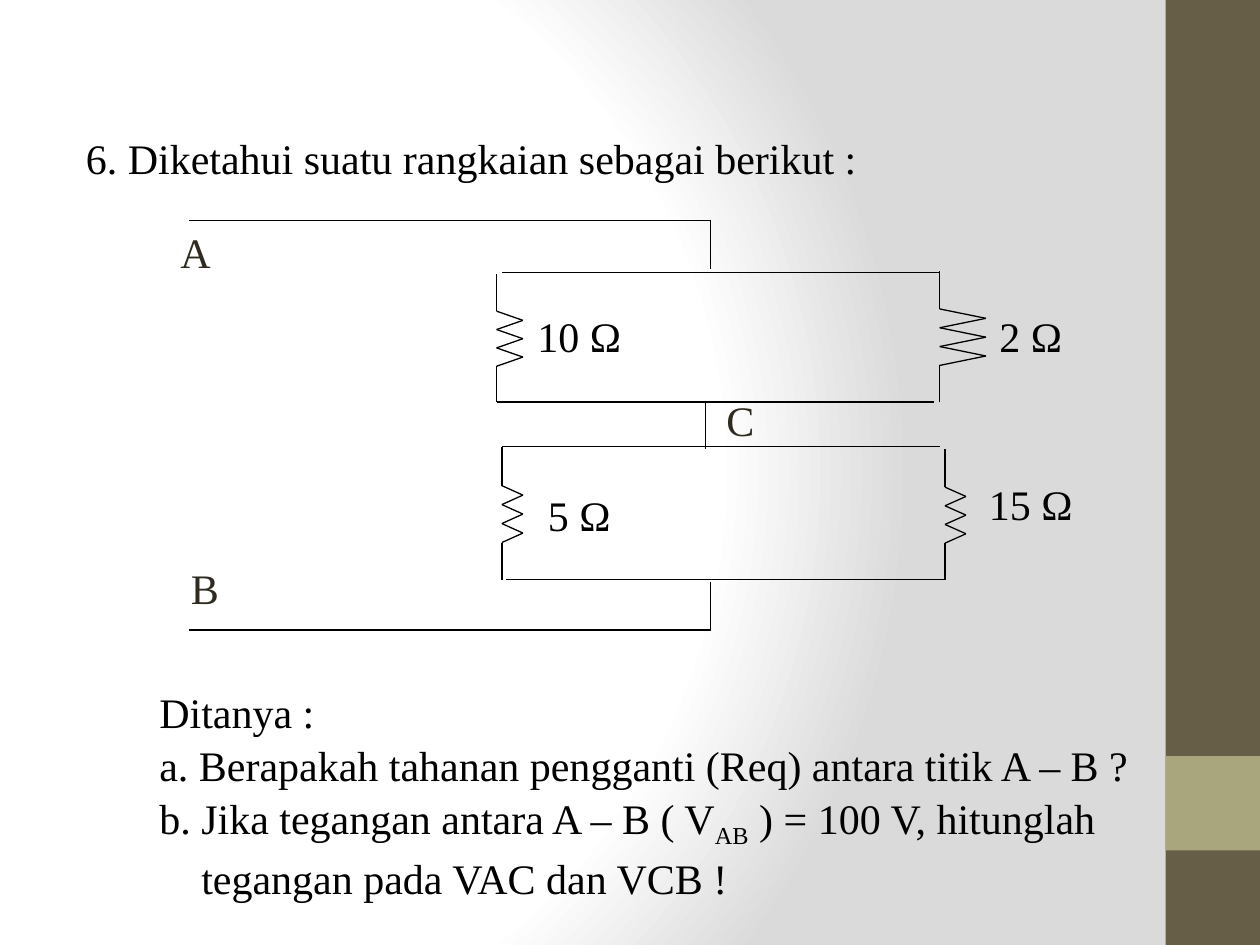
from itertools import pairwise
from pptx import Presentation
from pptx.dml.color import RGBColor
from pptx.enum.shapes import MSO_CONNECTOR, MSO_SHAPE
from pptx.oxml import parse_xml
from pptx.oxml.ns import nsdecls, qn
from pptx.oxml.xmlchemy import OxmlElement
from pptx.util import Inches, Pt

RECT = MSO_SHAPE.RECTANGLE
LINE = MSO_CONNECTOR.STRAIGHT
COLS, ROWS = 120, 90
WIDE, HIGH = Inches(10), Inches(7.5)
BLACK, DARK = "000000", "2F2B20"
FONT = "Times New Roman"


def paint(color):
    return RGBColor.from_string(color)


def col(n):
    return round(WIDE * n / COLS)


def row(n):
    return round(HIGH * n / ROWS)


def write(slide, box, lines, color=BLACK, size=24, before=0, indents=()):
    x, y, w, h = box
    frame = slide.shapes.add_textbox(col(x), row(y), col(w), row(h)).text_frame
    frame.word_wrap = True
    for i, runs in enumerate(lines):
        para = frame.paragraphs[0] if i == 0 else frame.add_paragraph()
        para.space_before = Pt(before)
        if i in indents:
            para._p.get_or_add_pPr().set("marL", str(col(4)))
        for j, text in enumerate(runs):
            run = para.add_run()
            run.text = text
            font = run.font
            font.name, font.size = FONT, Pt(size)
            font.color.rgb = paint(color)
            if j % 2:
                run._r.get_or_add_rPr().set("baseline", "-25000")


def wire(slide, points):
    for (x1, y1), (x2, y2) in pairwise(points):
        part = slide.shapes.add_connector(LINE, col(x1), row(y1), col(x2), row(y2))
        part.line.color.rgb = paint(BLACK)
        part.line.width = Pt(0.75)
        part._element.spPr.append(OxmlElement("a:effectLst"))


def resist(slide, box):
    x, y, w, h = box
    teeth = [(i % 2, 0.29 + 0.43 * i / 6) for i in range(7)]
    shares = [(0, 0), *teeth, (0, 1)]
    wire(slide, [(x + w * a, y + h * b) for a, b in shares])


def circuit(slide, left, top):
    wires = [
        [(2, 0), (51.7, 0), (51.7, 4.6)],
        [(31.8, 4.95), (73.5, 4.95)],
        [(31.3, 17.3), (73, 17.3)],
        [(51.2, 17.3), (51.2, 21.8)],
        [(31.8, 21.5), (73.5, 21.5)],
        [(32.2, 34.2), (74, 34.2)],
        [(51.7, 34.4), (51.7, 39), (2, 39)],
    ]
    for points in wires:
        wire(slide, [(left + x, top + y) for x, y in points])
    loads = [
        (31.3, 5.1, 2.5, 12.2),
        (73.5, 4.8, 4.4, 12.5),
        (31.8, 21.6, 2, 12.6),
        (74, 21.8, 2, 12.4),
    ]
    for x, y, w, h in loads:
        resist(slide, (left + x, top + y, w, h))
    labels = [
        ("10 Ω", 34, 8, 11, BLACK),
        ("2 Ω", 78, 8, 9, BLACK),
        ("5 Ω", 35, 25, 10, BLACK),
        ("15 Ω", 77, 24, 13, BLACK),
        ("A", 0, 0, 7, DARK),
        ("B", 1, 32, 10, DARK),
        ("C", 52, 16, 8, DARK),
    ]
    for text, x, y, w, color in labels:
        write(slide, (left + x, top + y, w, 6), [[text]], color=color)


def backdrop(slide):
    slide.background.fill.solid()
    stops = "".join(
        f'<a:gs pos="{pos}000"><a:srgbClr val="{color}"/></a:gs>'
        for pos, color in ((0, "FFFFFF"), (75, "FFFFFF"), (100, "DADADA"))
    )
    fade = parse_xml(
        f'<a:gradFill {nsdecls("a")} rotWithShape="1"><a:gsLst>{stops}</a:gsLst>'
        '<a:path path="circle"><a:fillToRect l="20000" t="50000" r="100000" b="50000"/>'
        "</a:path></a:gradFill>"
    )
    base = slide.element.find(".//" + qn("p:bgPr"))
    base.replace(base[0], fade)


def sidebar(slide, x, y, w, h):
    for top, tall, color in ((0, 1, "675E47"), (0.8, 0.1, "A9A57C")):
        bar = slide.shapes.add_shape(RECT, col(x), row(y + h * top), col(w), row(h * tall))
        bar.shadow.inherit = False
        bar.fill.solid()
        bar.fill.fore_color.rgb = paint(color)
        bar.line.fill.background()


def questions(slide, box):
    lines = [
        ["Ditanya :"],
        ["a. Berapakah tahanan pengganti (Req) antara titik A – B ?"],
        ["b. Jika tegangan antara A – B ( V", "AB", " ) = 100 V, hitunglah"],
        ["tegangan pada VAC dan VCB !"],
    ]
    write(slide, box, lines, before=1.5, indents=(3,))


def main():
    deck = Presentation()
    deck.slide_width, deck.slide_height = WIDE, HIGH
    slide = deck.slides.add_slide(deck.slide_layouts[6])
    backdrop(slide)
    sidebar(slide, 111, 0, 9, ROWS)
    write(slide, (7, 12, 101, 6), [["6. Diketahui suatu rangkaian sebagai berikut :"]])
    circuit(slide, 16, 21)
    questions(slide, (14, 64.75, 101, 21))
    deck.save("out.pptx")


if __name__ == "__main__":
    main()
